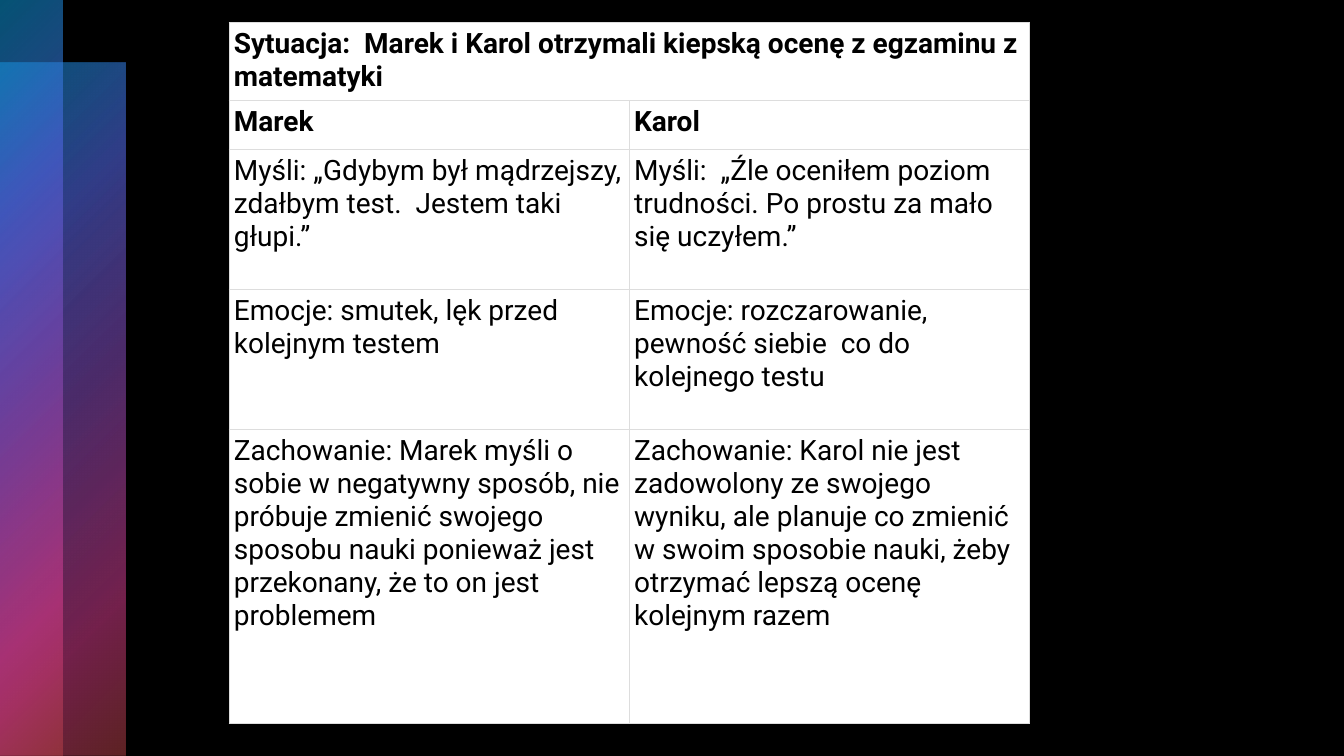
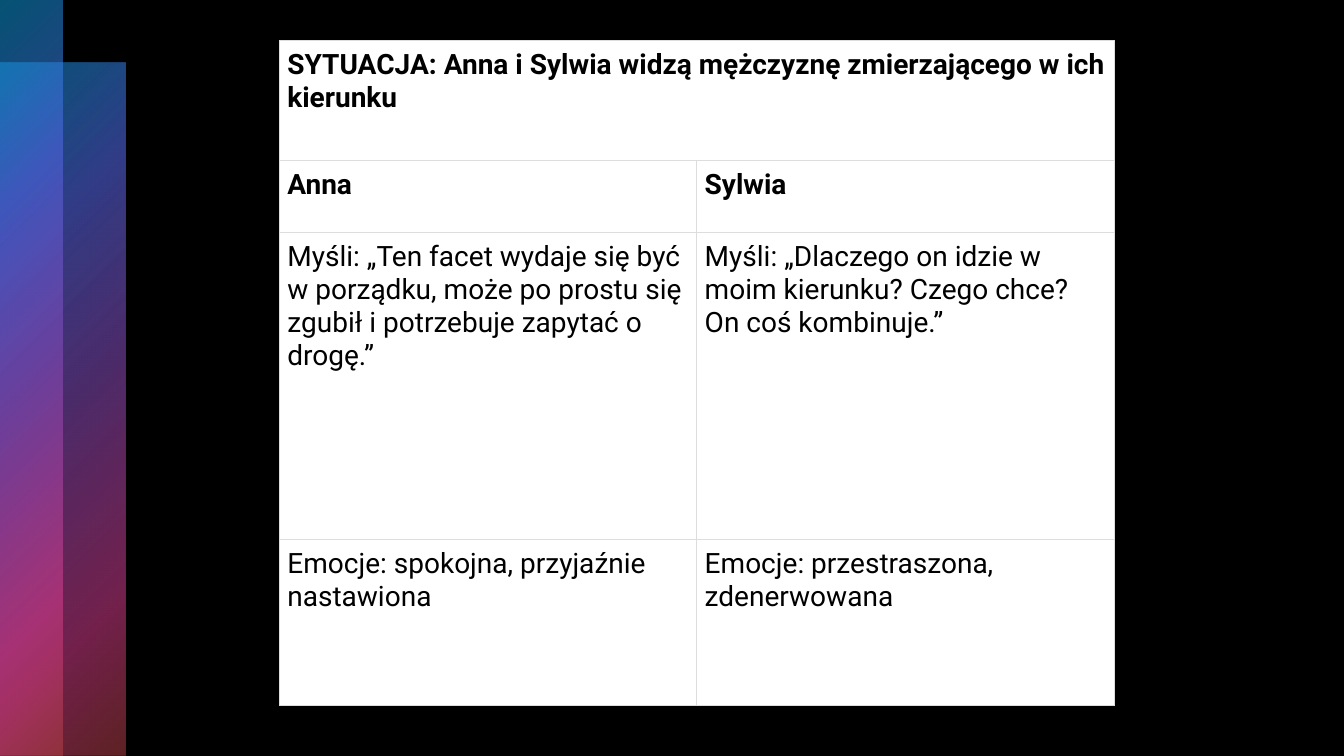
import pptx
import pptx.util
import pptx.oxml
import pptx.dml.color
import pptx.enum.shapes
from pptx.util import Inches, Pt

RGB = pptx.dml.color.RGBColor
BLACK = RGB(0x00, 0x00, 0x00)
WHITE = RGB(0xFF, 0xFF, 0xFF)
GREY = RGB(0xDD, 0xDD, 0xDD)
FONT = "Roboto"
SIZE = Pt(20)
NS = 'xmlns:a="http://schemas.openxmlformats.org/drawingml/2006/main"'

# Content: the first row spans the table, the second names the people
SLIDES = [
    {
        "at": (2.27, 0.22), "col": 3.97, "pad": 0.05,
        "rows": [0.78, 0.48, 1.39, 1.39, 2.92],
        "text": [
            ["Sytuacja:  Marek i Karol otrzymali kiepską ocenę z egzaminu z matematyki"],
            ["Marek", "Karol"],
            ["Myśli: „Gdybym był mądrzejszy, zdałbym test.  Jestem taki głupi.”",
             "Myśli:  „Źle oceniłem poziom trudności. Po prostu za mało się uczyłem.”"],
            ["Emocje: smutek, lęk przed kolejnym testem",
             "Emocje: rozczarowanie, pewność siebie  co do kolejnego testu"],
            ["Zachowanie: Marek myśli o sobie w negatywny sposób, nie próbuje zmienić "
             "swojego sposobu nauki ponieważ jest przekonany, że to on jest problemem",
             "Zachowanie: Karol nie jest zadowolony ze swojego wyniku, ale planuje co "
             "zmienić w swoim sposobie nauki, żeby otrzymać lepszą ocenę kolejnym razem"],
        ],
    },
    {
        "at": (2.77, 0.4), "col": 4.14, "pad": 0.08,
        "rows": [1.19, 0.72, 3.04, 1.65],
        "text": [
            ["SYTUACJA: Anna i Sylwia widzą mężczyznę zmierzającego w ich kierunku"],
            ["Anna", "Sylwia"],
            ["Myśli: „Ten facet wydaje się być w porządku, może po prostu się zgubił "
             "i potrzebuje zapytać o drogę.”",
             "Myśli: „Dlaczego on idzie w moim kierunku? Czego chce? On coś kombinuje.”"],
            ["Emocje: spokojna, przyjaźnie nastawiona",
             "Emocje: przestraszona, zdenerwowana"],
        ],
    },
]

# Side bands: left, top, width, height; stops: percent, colour, opacity
BANDS = [(0, 0.62, 1.24, 6.88), (0, 0, 0.62, 7.5)]
STOPS = [
    (0, RGB(0x0B, 0xA5, 0xE8), 50),
    (25, RGB(0x50, 0x66, 0xE1), 60),
    (50, RGB(0x89, 0x4E, 0xC0), 55),
    (81, RGB(0xE5, 0x41, 0x96), 50),
    (99, RGB(0xBE, 0x44, 0x49), 50),
]


def blend():
    """Radial gradient spreading from the top left corner."""
    stops = "".join(
        f'<a:gs pos="{pos * 1000}"><a:srgbClr val="{color}">'
        f'<a:alpha val="{alpha * 1000}"/></a:srgbClr></a:gs>'
        for pos, color, alpha in STOPS)
    return pptx.oxml.parse_xml(
        f'<a:gradFill {NS} rotWithShape="1"><a:gsLst>{stops}</a:gsLst>'
        '<a:path path="circle"><a:fillToRect r="100000" b="100000"/></a:path>'
        '</a:gradFill>')


def add_bands(slide, layout):
    """Draw the bands and move them to the layout, so all slides share them."""
    kind = pptx.enum.shapes.MSO_SHAPE.RECTANGLE
    for num, box in enumerate(BANDS, 1):
        band = slide.shapes.add_shape(kind, *map(Inches, box))
        band.name = f"Band {num}"
        band.shadow.inherit = False
        band.line.fill.background()
        band.element.spPr.find("{*}prstGeom").addnext(blend())
        band.element.nvSpPr.cNvPr.id = 20 + num
        layout.shapes.element.append(band.element)


def style(cell, pad):
    """Fill, margins and thin borders of one cell."""
    cell.fill.solid()
    cell.fill.fore_color.rgb = WHITE
    cell.margin_left = cell.margin_right = Inches(pad)
    cell.margin_top = cell.margin_bottom = Inches(pad)
    props = cell._tc.get_or_add_tcPr()
    for spot, side in enumerate("LRTB"):
        props.insert(spot, pptx.oxml.parse_xml(
            f'<a:ln{side} {NS} w="{Pt(0.6)}"><a:solidFill>'
            f'<a:srgbClr val="{GREY}"/></a:solidFill></a:ln{side}>'))


def add_grid(slide, data):
    left, top = data["at"]
    rows, col = data["rows"], data["col"]
    frame = slide.shapes.add_table(
        len(rows), 2, Inches(left), Inches(top), Inches(2 * col), Inches(sum(rows)))
    table = frame.table
    table.first_row = table.horz_banding = False
    for part in table.columns:
        part.width = Inches(col)
    for part, height in zip(table.rows, rows):
        part.height = Inches(height)
    for cell in table.iter_cells():
        style(cell, data["pad"])
    table.cell(0, 0).merge(table.cell(0, 1))
    for row, texts in enumerate(data["text"]):
        for pos, text in enumerate(texts):
            cell = table.cell(row, pos)
            cell.text = text
            font = cell.text_frame.paragraphs[0].font
            font.name, font.size, font.bold = FONT, SIZE, row < 2
            font.color.rgb = BLACK


def main():
    deck = pptx.Presentation()
    deck.slide_width, deck.slide_height = Inches(13.33), Inches(7.5)
    back = deck.slide_master.background.fill
    back.solid()
    back.fore_color.rgb = BLACK
    blank = deck.slide_layouts[6]
    for num, data in enumerate(SLIDES):
        slide = deck.slides.add_slide(blank)
        if num == 0:
            add_bands(slide, blank)
        add_grid(slide, data)
    deck.save("out.pptx")


if __name__ == "__main__":
    main()
